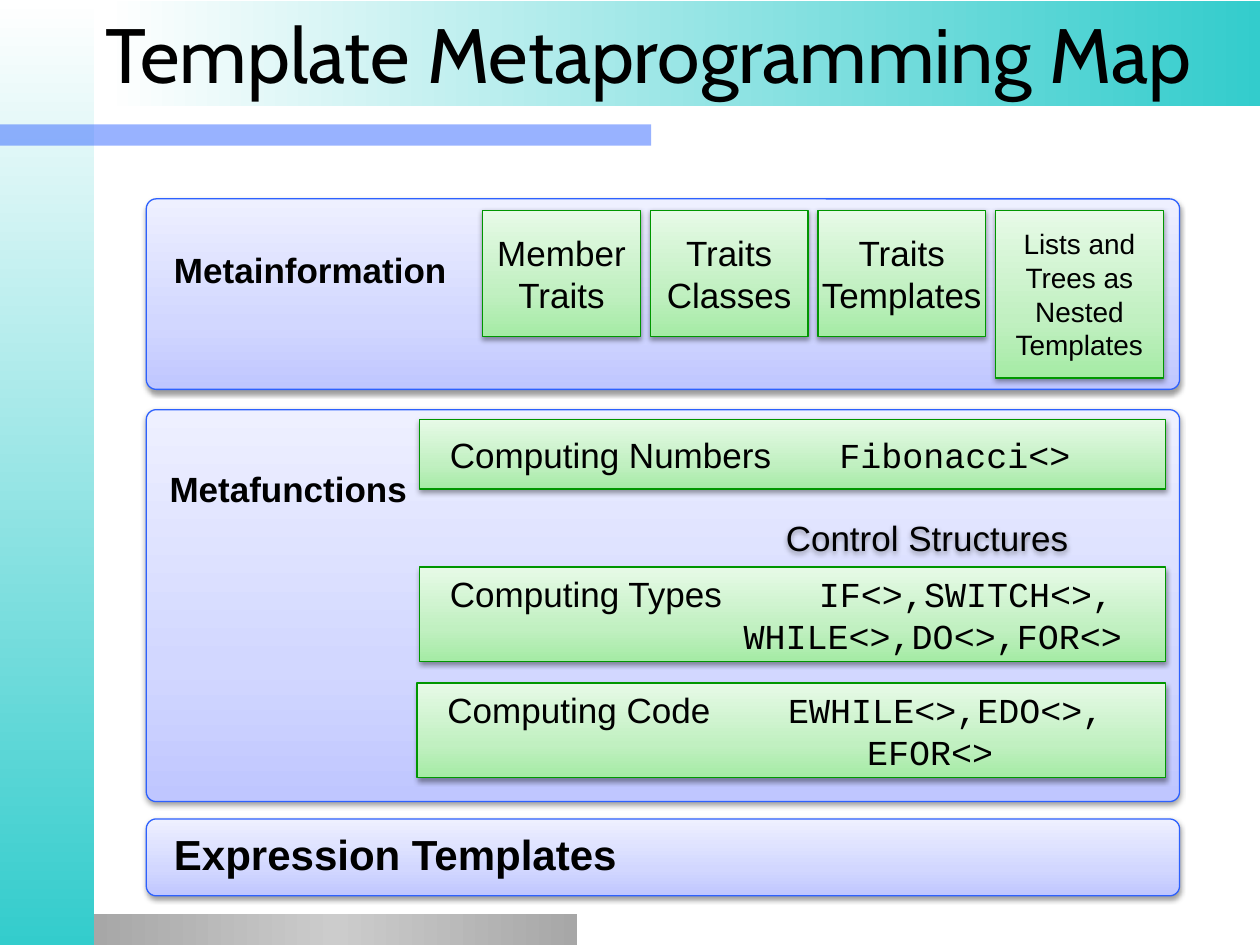
from lxml.etree import SubElement
from pptx import Presentation
from pptx.dml.color import RGBColor
from pptx.enum.shapes import MSO_SHAPE as Shape
from pptx.enum.text import MSO_ANCHOR as Anchor, PP_ALIGN as Align
from pptx.oxml.ns import qn
from pptx.util import Cm, Pt


def rgb(value):
    return RGBColor.from_string(value)


class MapSlide:
    sans, mono, title_font = "Arial", "Courier New", "Cabin"
    teal = [(0, "FFFFFF"), (100, "33CCCC")]
    grey = [(0, "A7A7A7"), (50, "CCCCCC"), (100, "A7A7A7")]
    lilac = [(0, "BFC6FF"), (35, "D2D7FF"), (100, "EEF0FF")]
    green = [(0, "A5EBA5"), (35, "C1F0C1"), (100, "E7FAE7")]

    def __init__(self, prs):
        self.slide = prs.slides.add_slide(prs.slide_layouts[6])

    def shape(self, kind, x, y, w, h):
        sp = self.slide.shapes.add_shape(kind, Cm(x), Cm(y), Cm(w), Cm(h))
        sp.fill.background()
        sp.line.fill.background()
        sp.shadow.inherit = False
        return sp

    def gradient(self, sp, stops, angle):
        sp.fill.gradient()
        sp.fill.gradient_angle = angle
        stop_list = sp.element.spPr.find(".//" + qn("a:gsLst"))
        stop_list.clear()
        for position, color in stops:
            stop = SubElement(stop_list, qn("a:gs"), pos=str(position * 1000))
            SubElement(stop, qn("a:srgbClr"), val=color)

    def shadow(self, sp):
        effects = sp.element.spPr.find(qn("a:effectLst"))
        outer = SubElement(effects, qn("a:outerShdw"), blurRad=str(Pt(3.1)),
                           dist=str(Pt(1.6)), dir="5400000", rotWithShape="0")
        color = SubElement(outer, qn("a:srgbClr"), val="000000")
        SubElement(color, qn("a:alpha"), val="38000")

    def band(self, x, y, w, h, stops, angle):
        self.gradient(self.shape(Shape.RECTANGLE, x, y, w, h), stops, angle)

    def accent(self, x, y, w, h, color, alpha):
        sp = self.shape(Shape.RECTANGLE, x, y, w, h)
        sp.fill.solid()
        sp.fill.fore_color.rgb = rgb(color)
        node = sp.element.spPr.find(".//" + qn("a:srgbClr"))
        SubElement(node, qn("a:alpha"), val=str(alpha * 1000))

    def card(self, kind, x, y, w, h, stops, outline):
        sp = self.shape(kind, x, y, w, h)
        self.gradient(sp, stops, 90)
        sp.line.color.rgb = rgb(outline)
        sp.line.width = Pt(0.75)
        self.shadow(sp)
        return sp

    def frame(self, sp, anchor=Anchor.MIDDLE, left=0.25, right=0.25, top=0.13):
        tf = sp.text_frame
        tf.word_wrap = True
        tf.vertical_anchor = anchor
        tf.margin_left, tf.margin_right = Cm(left), Cm(right)
        tf.margin_top, tf.margin_bottom = Cm(top), Cm(0.13)
        return tf

    def run(self, p, text, size=20, font=sans, bold=False):
        r = p.add_run()
        r.text = text
        r.font.size = Pt(size)
        r.font.name = font
        r.font.bold = bold
        r.font.color.rgb = rgb("000000")

    def line(self, tf, text, align, **style):
        p = tf.paragraphs[0]
        p.alignment = align
        self.run(p, text, **style)

    def title(self, text):
        sp = self.slide.shapes.add_textbox(Cm(1.88), Cm(0), Cm(23.52), Cm(2.13))
        self.line(self.frame(sp), text, Align.LEFT, size=44, font=self.title_font)

    def panel(self, text, y, h, size=20, left=0.5, top=0.13):
        sp = self.card(Shape.ROUNDED_RECTANGLE, 2.95, y, 20.83, h, self.lilac, "2D61FE")
        sp.adjustments[0] = 0.2 / h
        tf = self.frame(sp, Anchor.TOP, left, top=top)
        self.line(tf, text, Align.LEFT, size=size, bold=True)

    def box(self, text, x, w, h, size=20, side=0.25):
        sp = self.card(Shape.RECTANGLE, x, 4.24, w, h, self.green, "009600")
        self.line(self.frame(sp, left=side, right=side), text, Align.CENTER, size=size)

    def row(self, label, codes, x, y, h):
        sp = self.card(Shape.RECTANGLE, x, y, 23.5 - x, h, self.green, "009600")
        tf = self.frame(sp, left=0.61)
        for i, (code, stop) in enumerate(codes):
            p = tf.add_paragraph() if i else tf.paragraphs[0]
            p.alignment = Align.LEFT
            tabs = SubElement(p._p.get_or_add_pPr(), qn("a:tabLst"))
            SubElement(tabs, qn("a:tab"), pos=str(Cm(stop)), algn="l")
            if i == 0:
                self.run(p, label)
            self.run(p, "\t" + code, font=self.mono)

    def caption(self, text, x, y, w, h):
        sp = self.shape(Shape.ROUNDED_RECTANGLE, x, y, w, h)
        sp.adjustments[0] = 0.07
        self.shadow(sp)
        self.line(self.frame(sp, Anchor.TOP), text, Align.CENTER)


def main():
    prs = Presentation()
    prs.slide_width, prs.slide_height = Cm(25.4), Cm(19.05)
    s = MapSlide(prs)

    s.band(0, 0, 1.9, 19.05, s.teal, 270)
    s.accent(0, 2.51, 13.13, 0.43, "3366FF", 50)
    s.band(1.9, 18.42, 9.73, 0.63, s.grey, 0)
    s.band(2.13, 0.03, 23.27, 2.11, s.teal, 0)
    s.title("Template Metaprogramming Map")

    s.panel("Metainformation", 4.01, 3.84, top=0.94)
    s.panel("Metafunctions", 8.26, 7.9, left=0.41, top=1.1)

    x = 9.73
    for text, w, h, size, side in [
        ("Member Traits", 3.18, 2.54, 20, 0.25),
        ("Traits Classes", 3.18, 2.54, 20, 0.25),
        ("Traits Templates", 3.38, 2.54, 20, 0),
        ("Lists and Trees as Nested Templates", 3.38, 3.38, 16, 0.25),
    ]:
        s.box(text, x, w, h, size, side)
        x += w + 0.2

    s.row("Computing Numbers", [("Fibonacci<>", 7.85)], 8.46, 8.46, 1.4)
    s.caption("Control Structures", 14.12, 10.16, 9.14, 5.72)
    s.row("Computing Types", [("IF<>,SWITCH<>,", 7.44), ("WHILE<>,DO<>,FOR<>", 5.92)],
          8.46, 11.43, 1.9)
    s.row("Computing Code", [("EWHILE<>,EDO<>,", 6.87), ("EFOR<>", 8.46)],
          8.41, 13.77, 1.9)

    s.panel("Expression Templates", 16.51, 1.55, size=24)
    prs.save("out.pptx")


if __name__ == "__main__":
    main()
